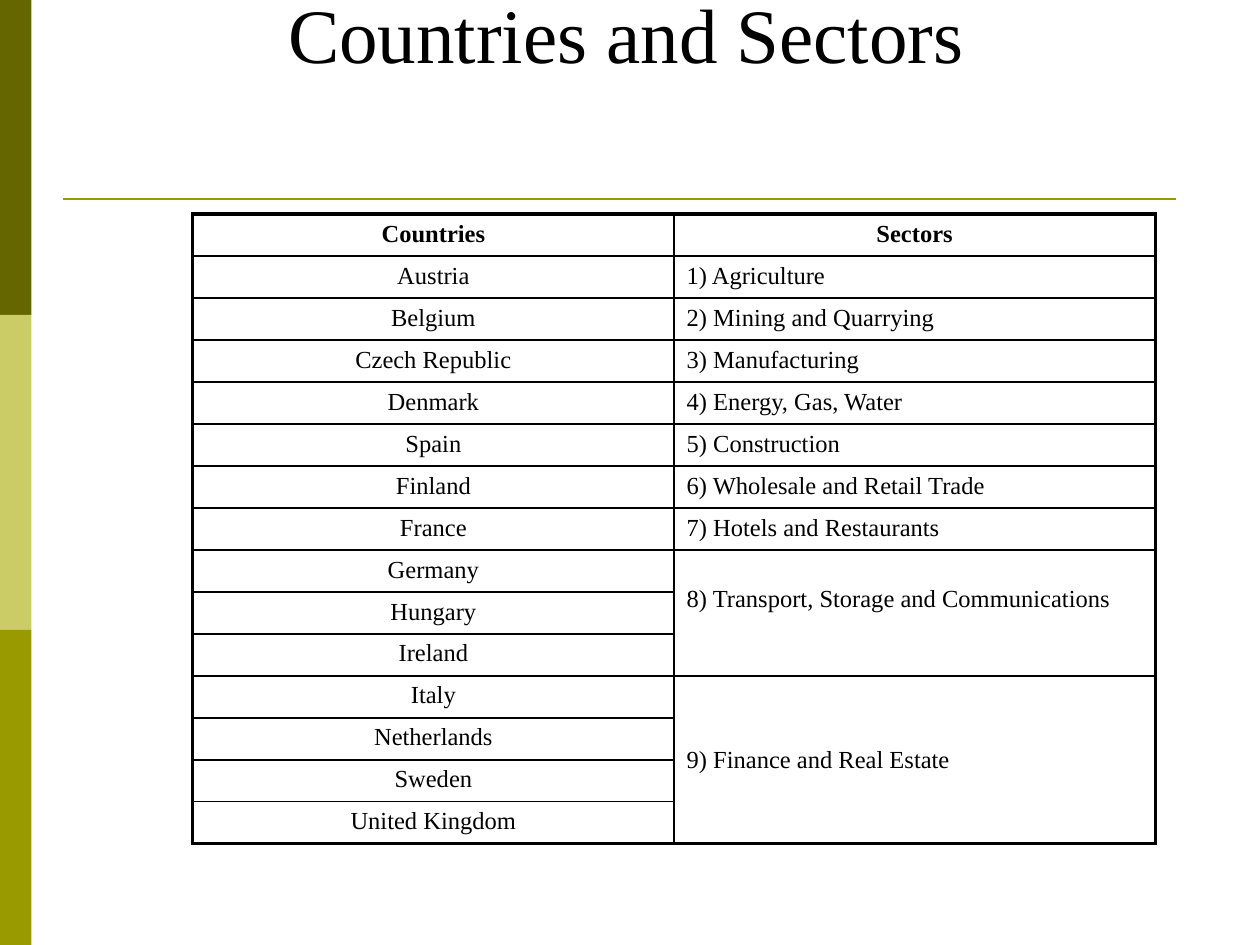
from lxml import etree
from pptx import Presentation
from pptx.dml.color import RGBColor
from pptx.enum.shapes import MSO_CONNECTOR, MSO_SHAPE
from pptx.enum.text import MSO_ANCHOR, PP_ALIGN
from pptx.oxml.ns import qn
from pptx.util import Inches, Pt

LEFT, CENTER = PP_ALIGN.LEFT, PP_ALIGN.CENTER
MIDDLE, TOP = MSO_ANCHOR.MIDDLE, MSO_ANCHOR.TOP
RECT, STRAIGHT = MSO_SHAPE.RECTANGLE, MSO_CONNECTOR.STRAIGHT

TITLE = "Countries and Sectors"
HEADS = ("Countries", "Sectors")
COUNTRIES = ["Austria", "Belgium", "Czech Republic", "Denmark", "Spain",
             "Finland", "France", "Germany", "Hungary", "Ireland", "Italy",
             "Netherlands", "Sweden", "United Kingdom"]
# Sector and the number of rows it spans
SECTORS = [("1) Agriculture", 1), ("2) Mining and Quarrying", 1),
           ("3) Manufacturing", 1), ("4) Energy, Gas, Water", 1),
           ("5) Construction", 1), ("6) Wholesale and Retail Trade", 1),
           ("7) Hotels and Restaurants", 1),
           ("8) Transport, Storage and Communications", 3),
           ("9) Finance and Real Estate", 4)]
RAISED = SECTORS[7][0]  # sits a little above the middle of its cell
BARS = ["666600", "CCCC66", "999900"]
RULE, INK = "999900", "000000"
FONT = {"name": "Times New Roman", "size": Pt(14), "bold": False}
THIN, THICK = 1, 2.25
ROWS = len(COUNTRIES) + 1


def color(code):
    return RGBColor.from_string(code)


def write(frame, text, align, **extra):
    par = frame.paragraphs[0]
    par.alignment = align
    run = par.add_run()
    run.text = text
    for key, val in {**FONT, **extra}.items():
        setattr(run.font, key, val)
    run.font.color.rgb = color(INK)


def border(cell, widths):
    props = cell._tc.get_or_add_tcPr()
    for spot, (side, width) in enumerate(widths.items()):
        line = etree.Element(qn("a:ln" + side), w=str(Pt(width)))
        fill = etree.SubElement(line, qn("a:solidFill"))
        etree.SubElement(fill, qn("a:srgbClr"), val=INK)
        props.insert(spot, line)


def fill_cell(row, col, text, align, span=1, **extra):
    cell = table.cell(row, col)
    if span > 1:
        cell.merge(table.cell(row + span - 1, col))
    cell.vertical_anchor = MIDDLE if span > 1 else TOP
    if text == RAISED:
        cell.margin_bottom = Inches(0.26)
    write(cell.text_frame, text, align, **extra)
    for part in range(row, row + span):
        piece = table.cell(part, col)
        piece.fill.background()
        border(piece, {"L": THIN if col else THICK,
                       "R": THICK if col else THIN,
                       "T": THIN if row else THICK,
                       "B": THICK if row + span == ROWS else THIN})


prs = Presentation()
prs.slide_width, prs.slide_height = Inches(10), Inches(7.5)
slide = prs.slides.add_slide(prs.slide_layouts[6])
shapes = slide.shapes

# Side bars
for i, code in enumerate(BARS):
    bar = shapes.add_shape(RECT, 0, Inches(2.5 * i), Inches(0.25), Inches(2.5))
    bar.shadow.inherit = False
    bar.fill.solid()
    bar.fill.fore_color.rgb = color(code)
    bar.line.fill.background()

# Rule under the title
rule = shapes.add_connector(STRAIGHT, Inches(0.5), Inches(1.58),
                            Inches(9.33), Inches(1.58))
rule.line.color.rgb = color(RULE)
rule.line.width = Pt(1.5)
etree.SubElement(rule._element.spPr, qn("a:effectLst"))

# Table
table = shapes.add_table(ROWS, 2, Inches(1.53), Inches(1.7),
                         Inches(7.64), Inches(5)).table
table.first_row = table.horz_banding = False
for col, head in enumerate(HEADS):
    fill_cell(0, col, head, CENTER, bold=True)
for row, name in enumerate(COUNTRIES, 1):
    fill_cell(row, 0, name, CENTER)
row = 1
for name, span in SECTORS:
    fill_cell(row, 1, name, LEFT, span)
    row += span

# Title
box = shapes.add_textbox(Inches(0.47), 0, Inches(9), Inches(0.52))
box.text_frame.word_wrap = True
box.text_frame.vertical_anchor = MIDDLE
write(box.text_frame, TITLE, CENTER, size=Pt(44))

prs.save("out.pptx")
